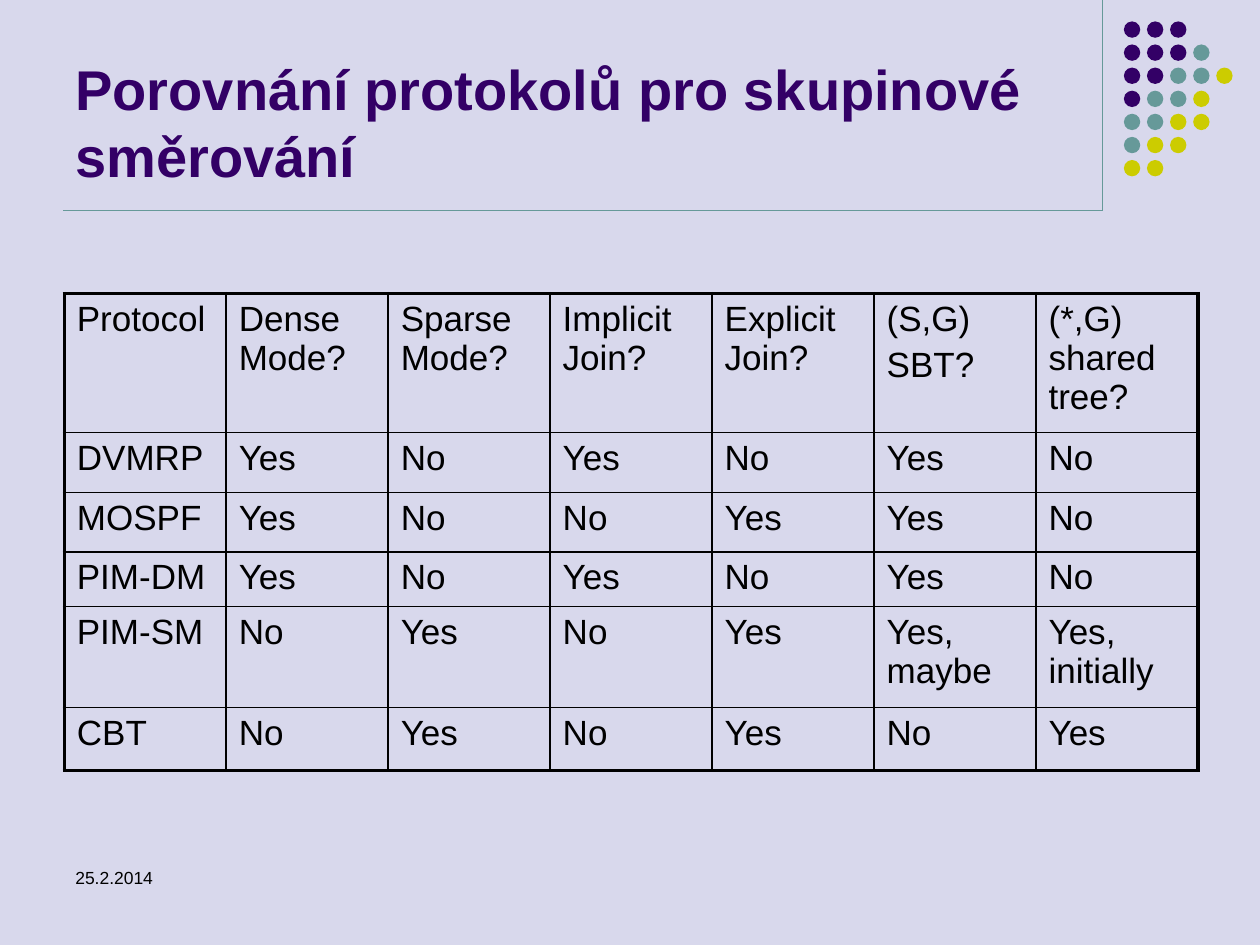
from typing import NamedTuple

from lxml import etree
from pptx import Presentation
from pptx.dml.color import RGBColor
from pptx.enum.shapes import MSO_CONNECTOR, MSO_SHAPE
from pptx.enum.text import MSO_ANCHOR
from pptx.oxml.ns import qn
from pptx.util import Inches, Pt

OVAL = MSO_SHAPE.OVAL
STRAIGHT = MSO_CONNECTOR.STRAIGHT
TOP, BOTTOM = MSO_ANCHOR.TOP, MSO_ANCHOR.BOTTOM

BACKGROUND = RGBColor(0xD8, 0xD8, 0xEC)
PURPLE = RGBColor(0x33, 0x00, 0x66)
TEAL = RGBColor(0x66, 0x99, 0x99)
YELLOW = RGBColor(0xCC, 0xCC, 0x00)
BLACK = RGBColor(0x00, 0x00, 0x00)

FONT = "Arial"
THIN, THICK = Pt(1), Pt(2.25)

DOT_COLORS = {"P": PURPLE, "T": TEAL, "Y": YELLOW}
DOT_ROWS = ["PPP", "PPPT", "PPTTY", "PTTY", "TTYY", "TYY", "YY"]
DOT_PITCH = Inches(1.1) / 6

ROW_HEIGHTS = [1.1, 0.48, 0.47, 0.43, 0.8, 0.5]
PROTOCOLS = [
    ["Protocol", "Dense Mode?", "Sparse Mode?", "Implicit Join?",
     "Explicit Join?", "(S,G)\nSBT?", "(*,G) shared tree?"],
    ["DVMRP", "Yes", "No", "Yes", "No", "Yes", "No"],
    ["MOSPF", "Yes", "No", "No", "Yes", "Yes", "No"],
    ["PIM-DM", "Yes", "No", "Yes", "No", "Yes", "No"],
    ["PIM-SM", "No", "Yes", "No", "Yes", "Yes, maybe", "Yes, initially"],
    ["CBT", "No", "Yes", "No", "Yes", "No", "Yes"],
]


class Rule(NamedTuple):
    x1: float
    y1: float
    x2: float
    y2: float


class Label(NamedTuple):
    text: str
    left: float
    top: float
    width: float
    height: float
    size: int
    color: RGBColor
    bold: bool
    anchor: MSO_ANCHOR


RULES = [Rule(8.75, 0, 8.75, 1.67), Rule(0.5, 1.67, 8.75, 1.67)]
LABELS = [
    Label("Porovnání protokolů pro skupinové směrování",
          0.5, 0.13, 8.25, 1.42, 32, PURPLE, True, BOTTOM),
    Label("25.2.2014", 0.5, 6.83, 2.33, 0.5, 10, BLACK, False, TOP),
]


def format_runs(tf, size: int, color: RGBColor, bold: bool = False) -> None:
    for p in tf.paragraphs:
        for r in p.runs:
            r.font.name = FONT
            r.font.size = Pt(size)
            r.font.bold = bold
            r.font.color.rgb = color


def draw_rule(slide, rule: Rule) -> None:
    line = slide.shapes.add_connector(STRAIGHT, *map(Inches, rule))
    line.line.color.rgb = TEAL
    line.line.width = Pt(0.75)
    etree.SubElement(line._element.spPr, qn("a:effectLst"))


def draw_dots(slide) -> None:
    group = slide.shapes.add_group_shape()
    size = Inches(0.13)
    for row, codes in enumerate(DOT_ROWS):
        for col, code in enumerate(codes):
            left = Inches(8.92) + round(col * DOT_PITCH)
            top = Inches(0.17) + round(row * DOT_PITCH)
            dot = group.shapes.add_shape(OVAL, left, top, size, size)
            dot.shadow.inherit = False
            dot.fill.solid()
            dot.fill.fore_color.rgb = DOT_COLORS[code]
            dot.line.fill.background()


def draw_label(slide, label: Label) -> None:
    box = slide.shapes.add_textbox(
        Inches(label.left), Inches(label.top), Inches(label.width), Inches(label.height))
    tf = box.text_frame
    tf.word_wrap = True
    tf.vertical_anchor = label.anchor
    tf.text = label.text
    format_runs(tf, label.size, label.color, label.bold)


def set_borders(cell, widths: dict[str, int]) -> None:
    """Put black borders, keyed by side L, R, T, B, ahead of the cell's fill."""
    tc_pr = cell._tc.get_or_add_tcPr()
    for index, (side, width) in enumerate(widths.items()):
        ln = etree.Element(qn(f"a:ln{side}"), w=str(width))
        fill = etree.SubElement(ln, qn("a:solidFill"))
        etree.SubElement(fill, qn("a:srgbClr"), val=str(BLACK))
        tc_pr.insert(index, ln)


def draw_table(slide) -> None:
    n_rows, n_cols = len(PROTOCOLS), len(PROTOCOLS[0])
    table = slide.shapes.add_table(
        n_rows, n_cols, Inches(0.51), Inches(2.33),
        Inches(9), Inches(sum(ROW_HEIGHTS))).table
    table.first_row = False
    table.horz_banding = False
    for i, (height, texts) in enumerate(zip(ROW_HEIGHTS, PROTOCOLS)):
        table.rows[i].height = Inches(height)
        for j, text in enumerate(texts):
            cell = table.cell(i, j)
            cell.fill.background()
            tf = cell.text_frame
            tf.text = text
            for p in tf.paragraphs[1:]:
                p.space_before = Pt(4)
            format_runs(tf, 20, BLACK)
            set_borders(cell, {
                "L": THICK if j == 0 else THIN,
                "R": THICK if j == n_cols - 1 else THIN,
                "T": THICK if i == 0 else THIN,
                "B": THICK if i == n_rows - 1 else THIN,
            })


def main() -> None:
    prs = Presentation()
    prs.slide_width, prs.slide_height = Inches(10), Inches(7.5)
    slide = prs.slides.add_slide(prs.slide_layouts[6])
    slide.background.fill.solid()
    slide.background.fill.fore_color.rgb = BACKGROUND
    for rule in RULES:
        draw_rule(slide, rule)
    draw_dots(slide)
    for label in LABELS:
        draw_label(slide, label)
    draw_table(slide)
    prs.save("out.pptx")


if __name__ == "__main__":
    main()
